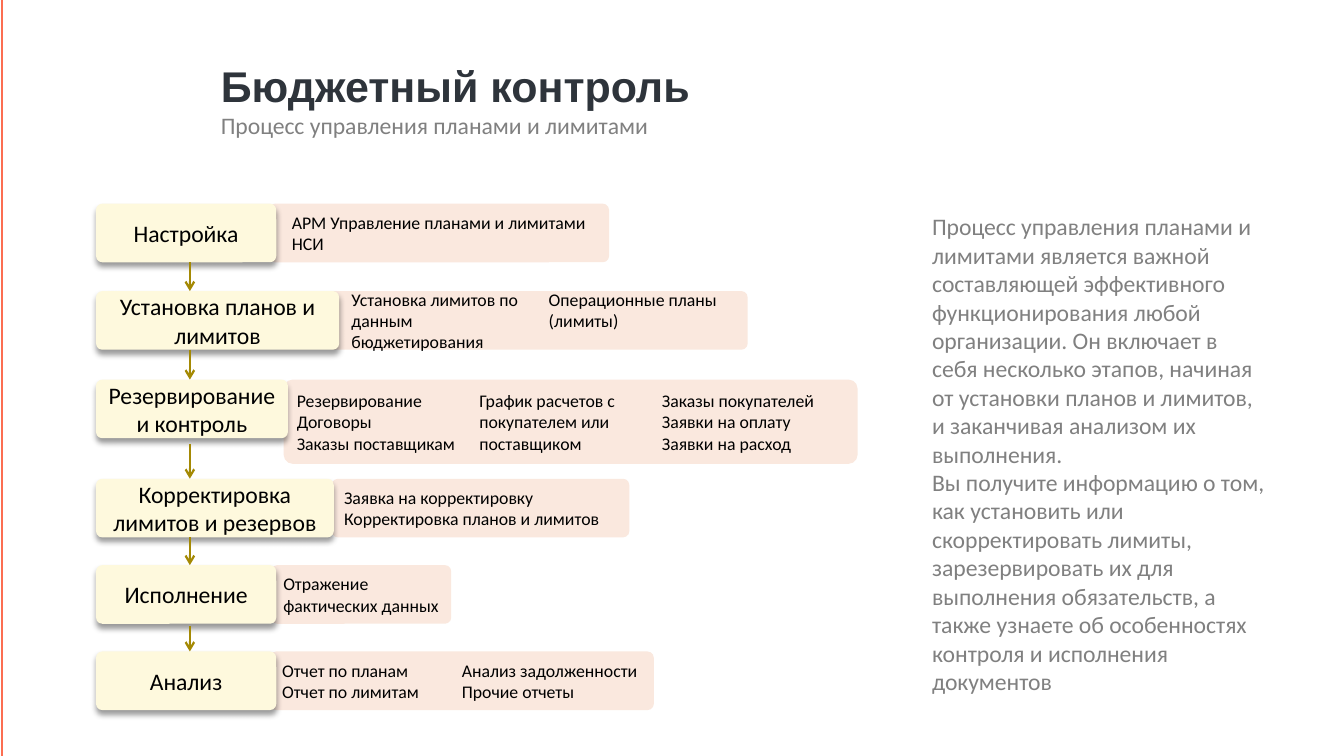
from dataclasses import dataclass

from pptx import Presentation
from pptx.dml.color import RGBColor
from pptx.enum.shapes import MSO_CONNECTOR, MSO_SHAPE
from pptx.enum.text import MSO_ANCHOR, MSO_AUTO_SIZE, PP_ALIGN
from pptx.oxml import parse_xml
from pptx.oxml.ns import nsdecls, qn
from pptx.oxml.xmlchemy import OxmlElement
from pptx.shapes.autoshape import Shape
from pptx.shapes.connector import Connector
from pptx.shapes.shapetree import GroupShapes
from pptx.slide import Slide
from pptx.text.text import TextFrame
from pptx.util import Inches, Pt

STRAIGHT = MSO_CONNECTOR.STRAIGHT
ROUNDED = MSO_SHAPE.ROUNDED_RECTANGLE
LEFT, CENTER = PP_ALIGN.LEFT, PP_ALIGN.CENTER
TOP, MIDDLE = MSO_ANCHOR.TOP, MSO_ANCHOR.MIDDLE
NO_AUTOFIT = MSO_AUTO_SIZE.NONE


@dataclass(frozen=True)
class Theme:
    heading_font: str = "Arial"
    text_font: str = "Calibri"
    heading: str = "2E343B"
    muted: str = "808080"
    text: str = "000000"
    stage_fill: str = "FEF9DD"
    detail_fill: str = "FAE8DE"
    arrow: str = "A48904"
    accent: str = "FC6E51"
    heading_size: float = 29
    text_size: float = 16
    detail_size: float = 12


@dataclass(frozen=True)
class Stage:
    name: str
    top: float
    width: float
    detail_left: float
    detail_width: float
    details: tuple[str, ...]
    detail_height: float = 0.55
    columns: int = 1
    indent: float = 0
    arrow_gap: float = 0


THEME = Theme()
SLIDE_WIDTH, SLIDE_HEIGHT = 12.6, 7.09
STAGE_LEFT, STAGE_HEIGHT, ARROW_X = 0.9, 0.55, 1.78
CORNER = 0.107

STAGES = (
    Stage("Настройка", 1.91, 1.69, 2.52, 3.19,
          ("АРМ Управление планами и лимитами", "НСИ"), indent=0.1),
    Stage("Установка планов и лимитов", 2.73, 2.28, 3.08, 3.93,
          ("Установка лимитов по данным бюджетирования Операционные планы (лимиты)",),
          columns=2, indent=0.1),
    Stage("Резервирование и контроль", 3.56, 1.8, 2.66, 5.38,
          ("Резервирование", "Договоры", "Заказы поставщикам",
           "График расчетов с покупателем или поставщиком",
           "Заказы покупателей", "Заявки на оплату", "Заявки на расход"),
          detail_height=0.79, columns=3, arrow_gap=0.05),
    Stage("Корректировка лимитов и резервов", 4.49, 2.23, 3.11, 2.79,
          ("Заявка на корректировку", "Корректировка планов и лимитов")),
    Stage("Исполнение", 5.3, 1.69, 2.54, 1.69,
          ("Отражение фактических данных",), arrow_gap=0.02),
    Stage("Анализ", 6.11, 1.69, 2.53, 3.6,
          ("Отчет по планам", "Отчет по лимитам",
           "Анализ задолженности", "Прочие отчеты"), columns=2),
)

DESCRIPTION = (
    "Процесс управления планами и лимитами является важной составляющей "
    "эффективного функционирования любой организации. Он включает в себя "
    "несколько этапов, начиная от установки планов и лимитов, и заканчивая "
    "анализом их выполнения.",
    "Вы получите информацию о том, как установить или скорректировать лимиты, "
    "зарезервировать их для выполнения обязательств, а также узнаете об "
    "особенностях контроля и исполнения документов",
)


def add_run(paragraph, text: str, size: float, color: str,
            font: str = THEME.text_font, bold: bool = False) -> None:
    run = paragraph.add_run()
    run.text = text
    run.font.name = font
    run.font.size = Pt(size)
    run.font.bold = bold
    run.font.color.rgb = RGBColor.from_string(color)


def write_paragraphs(frame: TextFrame, texts: tuple[str, ...], size: float, color: str,
                     align: PP_ALIGN = LEFT, indent: float = 0) -> None:
    frame.word_wrap = True
    for index, text in enumerate(texts):
        paragraph = frame.add_paragraph() if index else frame.paragraphs[0]
        paragraph.alignment = align
        if indent:
            paragraph._p.get_or_add_pPr().set("marL", str(Inches(indent)))
        add_run(paragraph, text, size, color)


def add_card(shapes: GroupShapes, left: float, top: float, width: float,
             height: float, fill: str) -> Shape:
    card = shapes.add_shape(ROUNDED, Inches(left), Inches(top), Inches(width), Inches(height))
    card.adjustments[0] = CORNER
    card.shadow.inherit = False
    card.fill.solid()
    card.fill.fore_color.rgb = RGBColor.from_string(fill)
    card.line.fill.background()
    card.text_frame.vertical_anchor = MIDDLE
    return card


def add_shadow(card: Shape) -> None:
    card.element.spPr.find(qn("a:effectLst")).append(parse_xml(
        f'<a:outerShdw {nsdecls("a")} blurRad="{Pt(4)}" dist="{Pt(3)}" dir="5400000" '
        'algn="t" rotWithShape="0"><a:srgbClr val="000000"><a:alpha val="40000"/>'
        '</a:srgbClr></a:outerShdw>'))


def add_line(slide: Slide, x: float, top: float, bottom: float,
             color: str, weight: float) -> Connector:
    line = slide.shapes.add_connector(STRAIGHT, Inches(x), Inches(top), Inches(x), Inches(bottom))
    line.line.color.rgb = RGBColor.from_string(color)
    line.line.width = Pt(weight)
    line.element.spPr.append(OxmlElement("a:effectLst"))
    return line


def add_arrow(slide: Slide, stage: Stage, following: Stage) -> None:
    start = stage.top + STAGE_HEIGHT + stage.arrow_gap
    arrow = add_line(slide, ARROW_X, start, following.top, THEME.arrow, 1.5)
    head = OxmlElement("a:tailEnd")
    head.set("type", "arrow")
    arrow.element.spPr.find(qn("a:ln")).append(head)


def add_stage(slide: Slide, stage: Stage) -> None:
    group = slide.shapes.add_group_shape().shapes
    detail = add_card(group, stage.detail_left, stage.top, stage.detail_width,
                      stage.detail_height, THEME.detail_fill)
    write_paragraphs(detail.text_frame, stage.details, THEME.detail_size, THEME.text,
                     indent=stage.indent)
    if stage.columns > 1:
        detail.element.txBody.bodyPr.set("numCol", str(stage.columns))
    label = add_card(group, STAGE_LEFT, stage.top, stage.width, STAGE_HEIGHT, THEME.stage_fill)
    add_shadow(label)
    write_paragraphs(label.text_frame, (stage.name,), THEME.text_size, THEME.text, CENTER)


def add_heading(slide: Slide) -> None:
    heading = slide.shapes.title
    heading.left, heading.top = Inches(1.97), Inches(0.47)
    heading.width, heading.height = Inches(8.86), Inches(0.6)
    frame = heading.text_frame
    frame.auto_size = NO_AUTOFIT
    frame.vertical_anchor = TOP
    frame.margin_top = Inches(0.09)
    paragraph = frame.paragraphs[0]
    paragraph.alignment = LEFT
    add_run(paragraph, "Бюджетный контроль", THEME.heading_size, THEME.heading,
            THEME.heading_font, True)
    paragraph.add_line_break()
    add_run(paragraph, "Процесс управления планами и лимитами", THEME.text_size, THEME.muted)


def add_description(slide: Slide) -> None:
    description = slide.shapes.add_textbox(Inches(8.64), Inches(1.94), Inches(3.34), Inches(4.68))
    write_paragraphs(description.text_frame, DESCRIPTION, THEME.text_size, THEME.muted)


def main() -> None:
    presentation = Presentation()
    presentation.slide_width = Inches(SLIDE_WIDTH)
    presentation.slide_height = Inches(SLIDE_HEIGHT)
    slide = presentation.slides.add_slide(presentation.slide_layouts.get_by_name("Title Only"))
    add_line(slide, 0.02, 0, SLIDE_HEIGHT, THEME.accent, 1.25)
    add_heading(slide)
    for stage in STAGES:
        add_stage(slide, stage)
    for stage, following in zip(STAGES, STAGES[1:]):
        add_arrow(slide, stage, following)
    add_description(slide)
    presentation.save("out.pptx")


if __name__ == "__main__":
    main()
